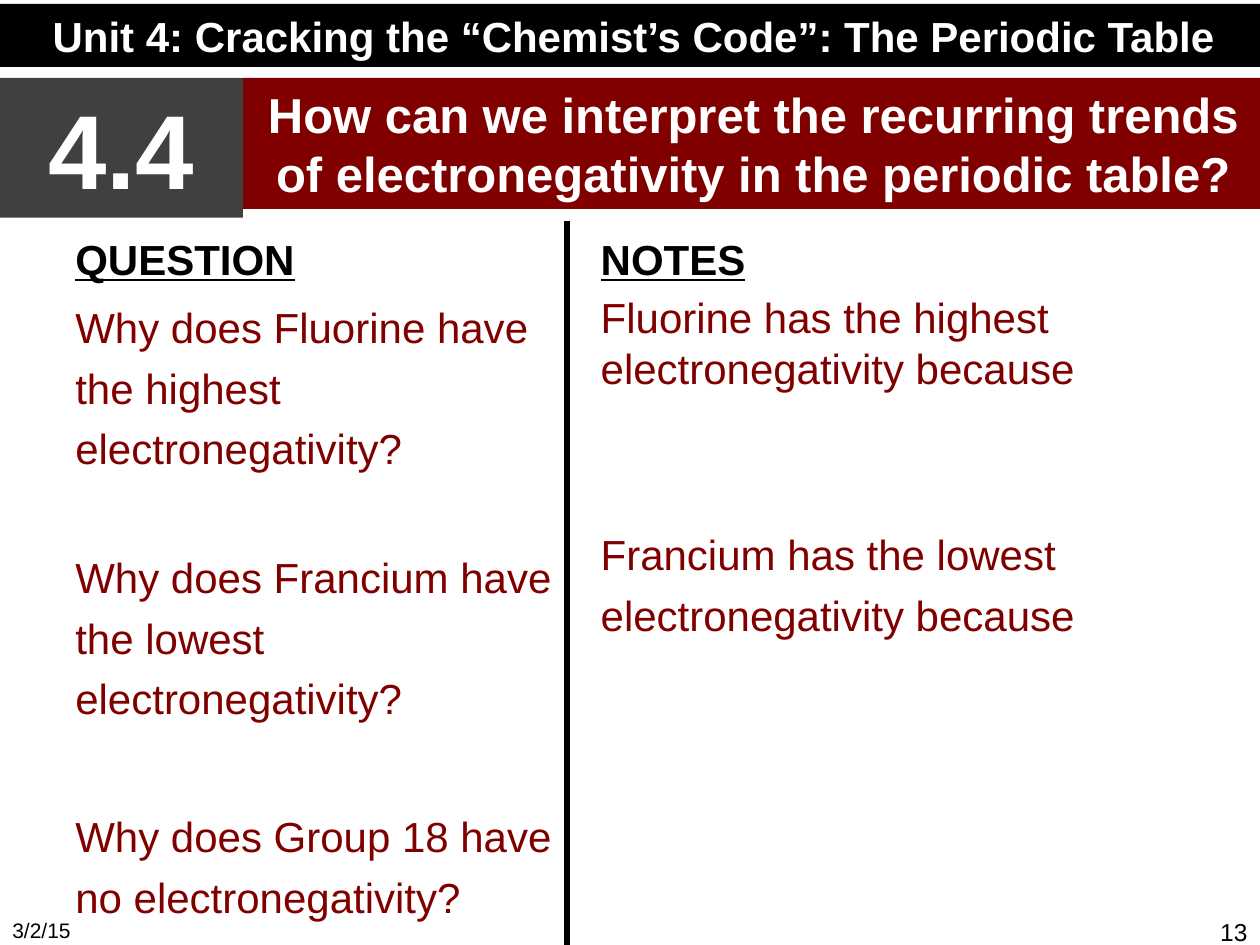
from lxml import etree
from pptx import Presentation
from pptx.dml.color import RGBColor
from pptx.enum.shapes import MSO_CONNECTOR, MSO_SHAPE
from pptx.enum.text import MSO_ANCHOR, MSO_AUTO_SIZE, PP_ALIGN
from pptx.oxml.ns import qn
from pptx.util import Cm, Pt

LEFT, CENTER, RIGHT = PP_ALIGN.LEFT, PP_ALIGN.CENTER, PP_ALIGN.RIGHT
TOP, MIDDLE = MSO_ANCHOR.TOP, MSO_ANCHOR.MIDDLE
NO_FIT = MSO_AUTO_SIZE.NONE
RECT, STRAIGHT = MSO_SHAPE.RECTANGLE, MSO_CONNECTOR.STRAIGHT

FONT = "Arial"
COLORS = {"black": "000000", "white": "FFFFFF", "gray": "404040", "maroon": "800000"}

TITLE = ("How can we interpret the recurring trends of electronegativity in the periodic table?",
         (4.9, 1.57, 20.57, 2.64), "maroon", 28)
BANNERS = [
    ("Unit 4: Cracking the “Chemist’s Code”: The Periodic Table",
     (0, 0.08, 25.55, 1.27), "black", 24),
    ("4.4", (0, 1.57, 4.9, 2.82), "gray", 60),
]
COLUMNS = [
    ("QUESTION", (1.27, 4.57, 10.8, 12.57), [
        ("Why does Fluorine have the highest electronegativity?", 1.2, 4.8),
        ("Why does Francium have the lowest electronegativity?", 1.2, 39),
        ("Why does Group 18 have no electronegativity?", 1.2, 44.5),
    ]),
    ("NOTES", (11.86, 4.57, 13.54, 12.57), [
        ("Fluorine has the highest electronegativity because", 1, 4.8),
        ("Francium has the lowest electronegativity because", 1.2, 72),
    ]),
]
FOOTERS = [
    ("3/2/15", (0, 18.36, 5.92, 0.69), LEFT, 12),
    ("13", (19.48, 18.36, 5.92, 0.69), RIGHT, 14),
]
DIVIDER = (11.43, 4.45, 11.43, 19.05)


def rgb(name):
    return RGBColor.from_string(COLORS[name])


def cm(values):
    return [Cm(v) for v in values]


def add_run(p, text, size, color, bold=False, underline=False):
    r = p.add_run()
    r.text = text
    r.font.name = FONT
    r.font.size = Pt(size)
    r.font.bold = bold
    r.font.underline = underline
    r.font.color.rgb = rgb(color)


def setup_frame(tf, anchor):
    tf.word_wrap = True
    tf.auto_size = NO_FIT
    tf.vertical_anchor = anchor
    tf.margin_left = tf.margin_right = Cm(0.25)
    tf.margin_top = tf.margin_bottom = Cm(0.13)


def fill_banner(sp, text, color, size):
    sp.fill.solid()
    sp.fill.fore_color.rgb = rgb(color)
    sp.line.fill.background()
    sp.shadow.inherit = False
    setup_frame(sp.text_frame, MIDDLE)
    p = sp.text_frame.paragraphs[0]
    p.alignment = CENTER
    p.line_spacing = 1
    add_run(p, text, size, "white", bold=True)


def add_text_frame(s, box):
    tf = s.shapes.add_textbox(*cm(box)).text_frame
    setup_frame(tf, TOP)
    return tf


def main():
    prs = Presentation()
    prs.slide_width, prs.slide_height = Cm(25.4), Cm(19.05)
    s = prs.slides.add_slide(prs.slide_layouts[5])

    text, box, color, size = TITLE
    title = s.shapes.title
    title.left, title.top, title.width, title.height = cm(box)
    fill_banner(title, text, color, size)

    for text, box, color, size in BANNERS:
        fill_banner(s.shapes.add_shape(RECT, *cm(box)), text, color, size)

    for heading, box, entries in COLUMNS:
        tf = add_text_frame(s, box)
        add_run(tf.paragraphs[0], heading, 24, "black", bold=True, underline=True)
        for text, spacing, before in entries:
            p = tf.add_paragraph()
            p.line_spacing = spacing
            p.space_before = Pt(before)
            add_run(p, text, 24, "maroon")

    divider = s.shapes.add_connector(STRAIGHT, *cm(DIVIDER))
    divider.line.color.rgb = rgb("black")
    divider.line.width = Pt(3)
    etree.SubElement(divider._element.spPr, qn("a:effectLst"))

    for text, box, align, size in FOOTERS:
        p = add_text_frame(s, box).paragraphs[0]
        p.alignment = align
        add_run(p, text, size, "black")

    prs.save("out.pptx")


if __name__ == "__main__":
    main()
